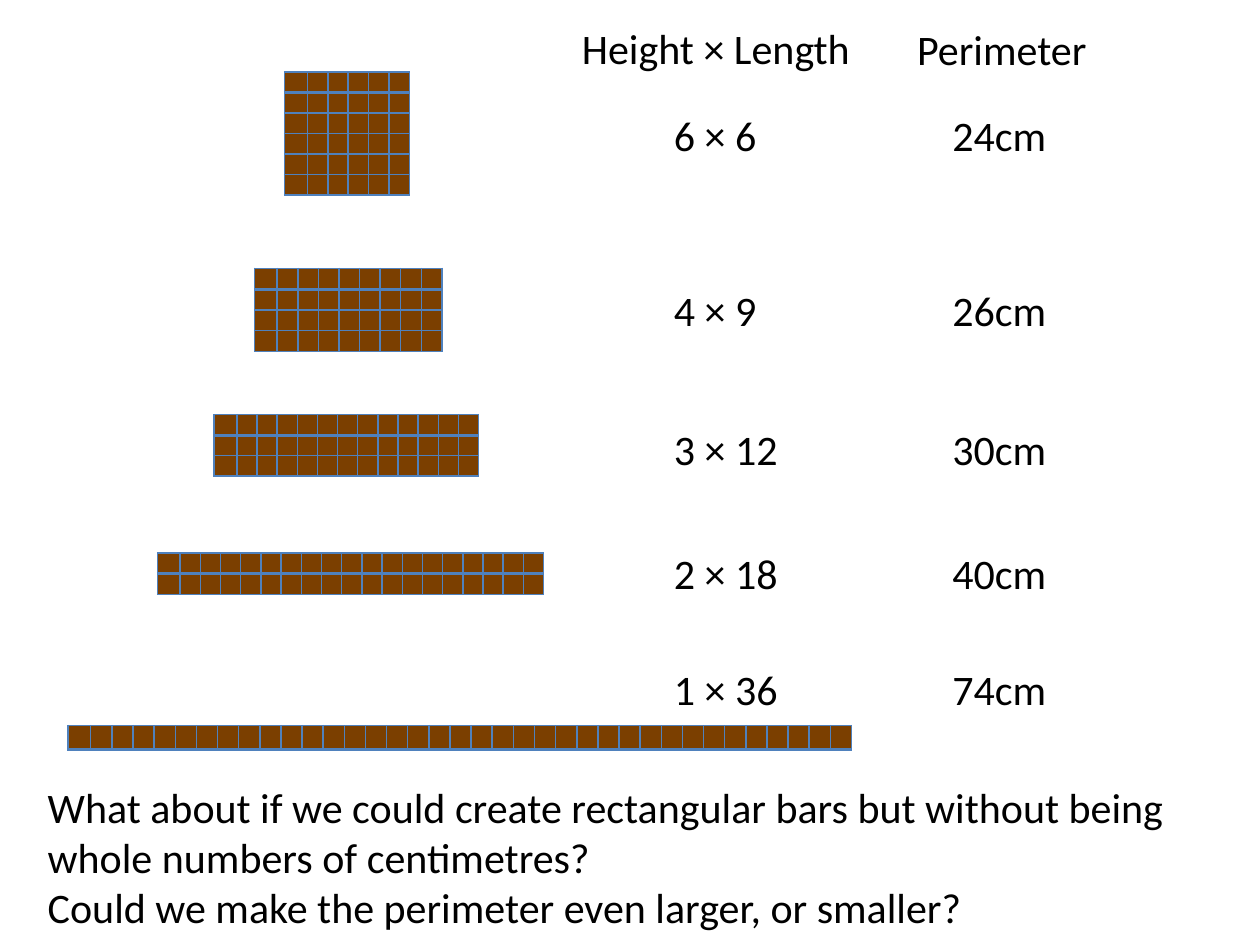
from lxml import etree
from pptx import Presentation
from pptx.dml.color import RGBColor
from pptx.enum.text import MSO_AUTO_SIZE
from pptx.oxml.ns import qn
from pptx.util import Inches, Pt

FIT_SHAPE = MSO_AUTO_SIZE.SHAPE_TO_FIT_TEXT
BROWN = RGBColor(0x7B, 0x3F, 0x00)
BLUE = RGBColor(0x4F, 0x81, 0xBD)
BLACK = RGBColor(0, 0, 0)

FIRST_COL = 0.18
LINE_HEIGHT = 0.5
SIZE_X, SIZE_W = 5.25, 1.31
PERIMETER_X, PERIMETER_W = 7.46, 1.2

# rows, columns, bar box, label top, size, perimeter
BARS = [
    (6, 6, (2.26, 0.57, 0.99, 0.98), 0.82, "6 × 6", "24cm"),
    (4, 9, (2.02, 2.13, 1.49, 0.66), 2.21, "4 × 9", "26cm"),
    (3, 13, (1.7, 3.29, 2.1, 0.49), 3.31, "3 × 12", "30cm"),
    (2, 19, (1.25, 4.39, 3.07, 0.33), 4.3, "2 × 18", "40cm"),
    (1, 37, (0.54, 5.76, 6.22, 0.19), 5.22, "1 × 36", "74cm"),
]
QUESTIONS = [
    "What about if we could create rectangular bars but without being "
    "whole numbers of centimetres?",
    "Could we make the perimeter even larger, or smaller?",
]


def add_text(s, x, y, w, h, *lines):
    tf = s.shapes.add_textbox(Inches(x), Inches(y), Inches(w), Inches(h)).text_frame
    tf.word_wrap = True
    tf.auto_size = FIT_SHAPE
    for i, line in enumerate(lines):
        p = tf.add_paragraph() if i else tf.paragraphs[0]
        r = p.add_run()
        r.text = line
        r.font.name = "Calibri"
        r.font.size = Pt(24)
        r.font.color.rgb = BLACK


def style_square(cell, top, bottom):
    """Fill one square of chocolate; top and bottom are line widths in points."""
    cell.margin_left = cell.margin_right = cell.margin_top = cell.margin_bottom = 0
    # A tiny font keeps the empty cell from growing
    p = cell.text_frame.paragraphs[0]
    etree.SubElement(p._p, qn("a:endParaRPr"), sz="100")
    tc_pr = cell._tc.get_or_add_tcPr()
    for side, width in (("L", 1), ("R", 1), ("T", top), ("B", bottom)):
        ln = etree.SubElement(tc_pr, qn(f"a:ln{side}"), w=str(Pt(width)))
        fill = etree.SubElement(ln, qn("a:solidFill"))
        etree.SubElement(fill, qn("a:srgbClr"), val=str(BLUE))
    cell.fill.solid()
    cell.fill.fore_color.rgb = BROWN


def add_bar(s, rows, cols, x, y, w, h):
    table = s.shapes.add_table(
        rows, cols, Inches(x), Inches(y), Inches(w), Inches(h)).table
    table.first_row = table.horz_banding = False
    for i, col in enumerate(table.columns):
        col.width = Inches((w - FIRST_COL) / (cols - 1) if i else FIRST_COL)
    for i, row in enumerate(table.rows):
        row.height = Inches(h / rows)
        for cell in row.cells:
            style_square(cell, top=2 if i == 1 else 1, bottom=1 if i else 2)


def add_comparison(s):
    add_text(s, 4.52, 0.13, 2.49, LINE_HEIGHT, "Height × Length")
    add_text(s, 7.18, 0.14, 1.62, LINE_HEIGHT, "Perimeter")
    for rows, cols, box, top, size, perimeter in BARS:
        add_bar(s, rows, cols, *box)
        add_text(s, SIZE_X, top, SIZE_W, LINE_HEIGHT, size)
        add_text(s, PERIMETER_X, top, PERIMETER_W, LINE_HEIGHT, perimeter)


def main():
    prs = Presentation()
    prs.slide_width, prs.slide_height = Inches(10), Inches(7.5)
    s = prs.slides.add_slide(prs.slide_layouts[6])
    add_comparison(s)
    add_text(s, 0.28, 6.15, 9.31, 1.31, *QUESTIONS)
    prs.save("out.pptx")


if __name__ == "__main__":
    main()
